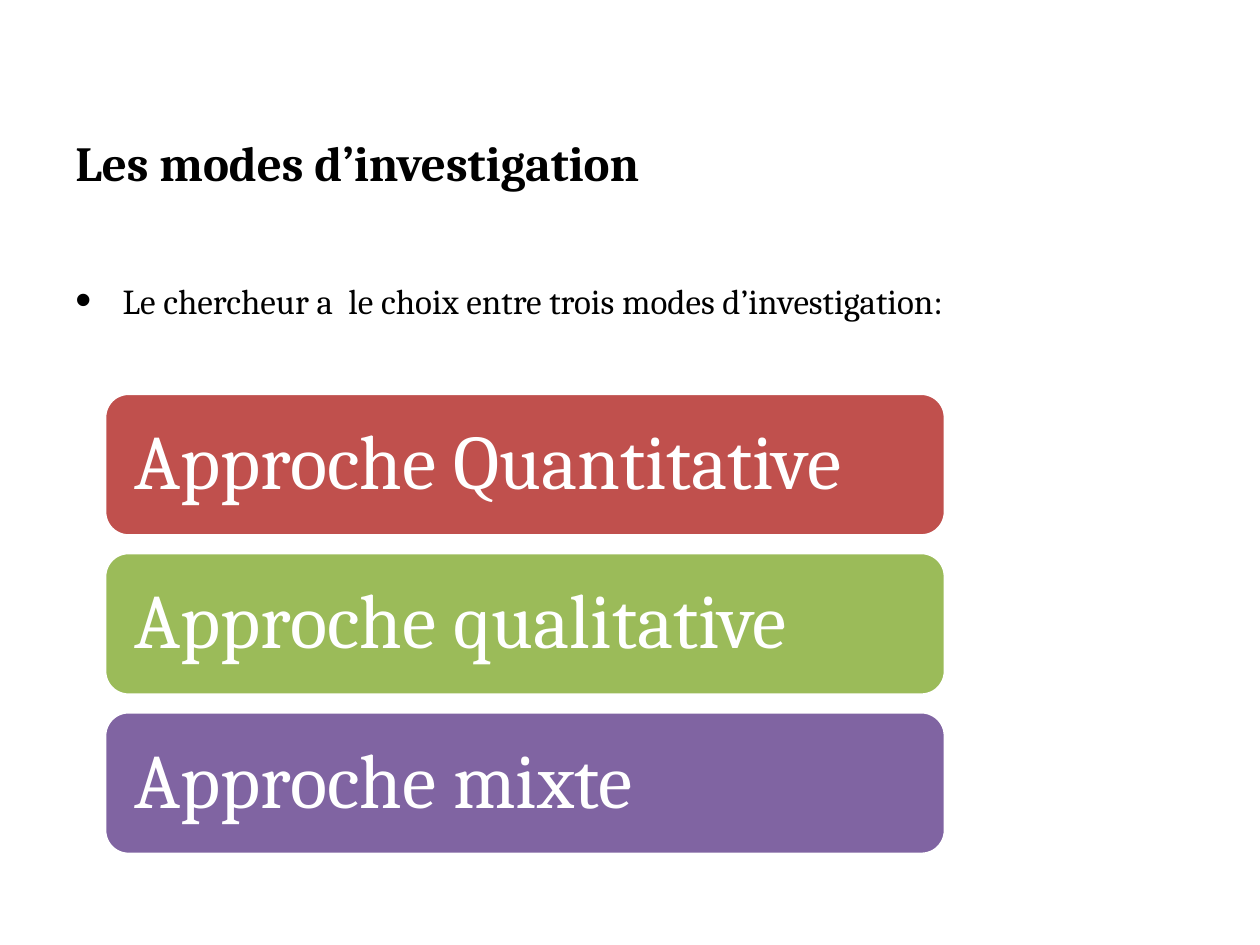
"""Build a slide presenting the three modes of investigation."""
from dataclasses import dataclass

import lxml.etree
import pptx
import pptx.dml.color
import pptx.enum.shapes
import pptx.enum.text
import pptx.oxml.ns
import pptx.shapes.autoshape
import pptx.slide
import pptx.text.text
import pptx.util

Pt = pptx.util.Pt
RGBColor = pptx.dml.color.RGBColor
ANCHOR = pptx.enum.text.MSO_ANCHOR

BLACK = RGBColor(0x00, 0x00, 0x00)
WHITE = RGBColor(0xFF, 0xFF, 0xFF)
RED = RGBColor(0xC0, 0x50, 0x4D)
GREEN = RGBColor(0x9B, 0xBB, 0x59)
PURPLE = RGBColor(0x80, 0x64, 0xA2)

CARD_LEFT, CARD_TOP, CARD_WIDTH, CARD_HEIGHT = 60, 225, 480, 81
CARD_PITCH = 91
CARD_INSET = Pt(13)


@dataclass(frozen=True)
class Approach:
    label: str
    color: RGBColor


APPROACHES = (
    Approach("Approche Quantitative", RED),
    Approach("Approche qualitative", GREEN),
    Approach("Approche mixte", PURPLE),
)


def apply(target: object, values: dict) -> None:
    for name, value in values.items():
        setattr(target, name, value)


def write(box: pptx.shapes.autoshape.Shape, text: str, size: float, color: RGBColor,
          bold: bool = False, spacing: float = 1.0,
          anchor: ANCHOR = ANCHOR.TOP) -> pptx.text.text._Paragraph:
    apply(box.text_frame, {"word_wrap": True, "vertical_anchor": anchor})
    para = box.text_frame.paragraphs[0]
    apply(para, {"alignment": pptx.enum.text.PP_ALIGN.LEFT, "line_spacing": spacing})
    span = para.add_run()
    span.text = text
    apply(span.font, {"name": "Cambria", "size": Pt(size), "bold": bold})
    span.font.color.rgb = color
    return para


def add_bullet(para: pptx.text.text._Paragraph, indent: float) -> None:
    properties = para._p.get_or_add_pPr()
    properties.set("marL", str(Pt(indent)))
    properties.set("indent", str(-Pt(indent)))
    for tag, values in (("a:buSzPct", {"val": "130000"}),
                        ("a:buFont", {"typeface": "Arial"}),
                        ("a:buChar", {"char": "•"})):
        lxml.etree.SubElement(properties, pptx.oxml.ns.qn(tag), values)


def add_card(page: pptx.slide.Slide, approach: Approach, top: float) -> None:
    card = page.shapes.add_shape(
        pptx.enum.shapes.MSO_SHAPE.ROUNDED_RECTANGLE,
        Pt(CARD_LEFT), Pt(top), Pt(CARD_WIDTH), Pt(CARD_HEIGHT))
    card.shadow.inherit = False
    card.fill.solid()
    card.fill.fore_color.rgb = approach.color
    card.line.color.rgb = WHITE
    card.line.width = Pt(1.5)
    sides = ("left", "top", "right", "bottom")
    apply(card.text_frame, {f"margin_{side}": CARD_INSET for side in sides})
    write(card, approach.label, 44, WHITE, spacing=0.9, anchor=ANCHOR.MIDDLE)


def main() -> None:
    deck = pptx.Presentation()
    apply(deck, {"slide_width": Pt(720), "slide_height": Pt(540)})
    page = deck.slides.add_slide(deck.slide_layouts[6])
    title = page.shapes.add_textbox(Pt(36), Pt(72), Pt(648), Pt(72))
    write(title, "Les modes d’investigation", 28, BLACK, bold=True)
    body = page.shapes.add_textbox(Pt(36), Pt(144), Pt(648), Pt(338.4))
    intro = write(body, "Le chercheur a  le choix entre trois modes d’investigation:",
                  20, BLACK, spacing=1.5)
    add_bullet(intro, 27)
    for index, approach in enumerate(APPROACHES):
        add_card(page, approach, CARD_TOP + index * CARD_PITCH)
    deck.save("out.pptx")


if __name__ == "__main__":
    main()
